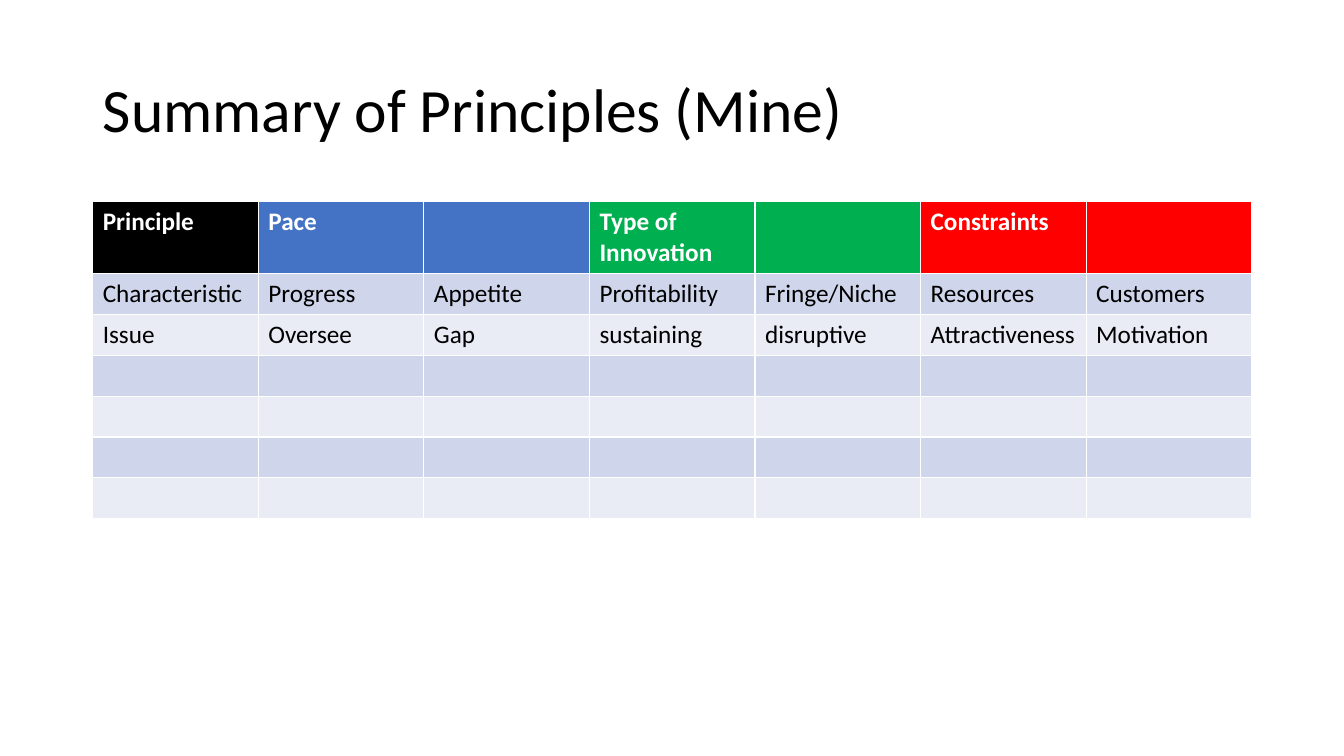
from pptx import Presentation
from pptx.dml.color import RGBColor
from pptx.enum.text import MSO_ANCHOR, MSO_AUTO_SIZE, PP_ALIGN
from pptx.util import Inches, Pt

SLIDE_WIDTH, SLIDE_HEIGHT = Inches(13.33), Inches(7.5)
TITLE_ONLY_LAYOUT = 5
BLACK, WHITE = "000000", "FFFFFF"
BLUE, GREEN, RED = "4472C4", "00B050", "FF0000"
BANDS = ("CFD5EA", "E9EBF5")
HEADER_FILLS = (BLACK, BLUE, BLUE, GREEN, GREEN, RED, RED)
HEADER_HEIGHT, ROW_HEIGHT = Inches(0.7), Inches(0.405)

PRINCIPLES = [
    ["Principle", "Pace", "", "Type of Innovation", "", "Constraints", ""],
    ["Characteristic", "Progress", "Appetite", "Profitability",
     "Fringe/Niche", "Resources", "Customers"],
    ["Issue", "Oversee", "Gap", "sustaining",
     "disruptive", "Attractiveness", "Motivation"],
]
EMPTY_ROWS = 4


def color(hex_string):
    return RGBColor.from_string(hex_string)


class SlideBuilder:
    font_name = "Calibri"

    def __init__(self, slide):
        self.slide = slide

    def style(self, paragraph, size, text_color, bold=False):
        font = paragraph.font
        font.name, font.size, font.bold = self.font_name, Pt(size), bold
        font.color.rgb = color(text_color)

    def box(self, left, top, width, height):
        """Turn shares of the slide's size into lengths."""
        return (int(left * SLIDE_WIDTH), int(top * SLIDE_HEIGHT),
                int(width * SLIDE_WIDTH), int(height * SLIDE_HEIGHT))

    def title(self, text, *shares):
        title = self.slide.shapes.title
        title.left, title.top, title.width, title.height = self.box(*shares)
        frame = title.text_frame
        frame.text = text
        frame.word_wrap = True
        frame.auto_size = MSO_AUTO_SIZE.NONE
        frame.vertical_anchor = MSO_ANCHOR.MIDDLE
        paragraph = frame.paragraphs[0]
        paragraph.alignment = PP_ALIGN.LEFT
        paragraph.line_spacing = 0.9
        self.style(paragraph, 44, BLACK)

    def table(self, rows, *shares):
        """Add a table with a coloured header; its style draws the white borders."""
        table = self.slide.shapes.add_table(
            len(rows), len(rows[0]), *self.box(*shares)).table
        for row_index, texts in enumerate(rows):
            is_header = row_index == 0
            table.rows[row_index].height = HEADER_HEIGHT if is_header else ROW_HEIGHT
            for column_index, text in enumerate(texts):
                cell = table.cell(row_index, column_index)
                fill = HEADER_FILLS[column_index] if is_header else BANDS[(row_index - 1) % 2]
                cell.fill.solid()
                cell.fill.fore_color.rgb = color(fill)
                cell.text = text
                self.style(cell.text_frame.paragraphs[0], 18,
                           WHITE if is_header else BLACK, bold=is_header)


def main():
    presentation = Presentation()
    presentation.slide_width, presentation.slide_height = SLIDE_WIDTH, SLIDE_HEIGHT
    layout = presentation.slide_layouts[TITLE_ONLY_LAYOUT]
    builder = SlideBuilder(presentation.slides.add_slide(layout))

    left, width = 0.069, 0.8625
    builder.title("Summary of Principles (Mine)", left, 0.053, width, 0.193)
    blank_row = [""] * len(HEADER_FILLS)
    builder.table(PRINCIPLES + [blank_row] * EMPTY_ROWS, left, 0.267, width, 0.417)

    presentation.save("out.pptx")


if __name__ == "__main__":
    main()
